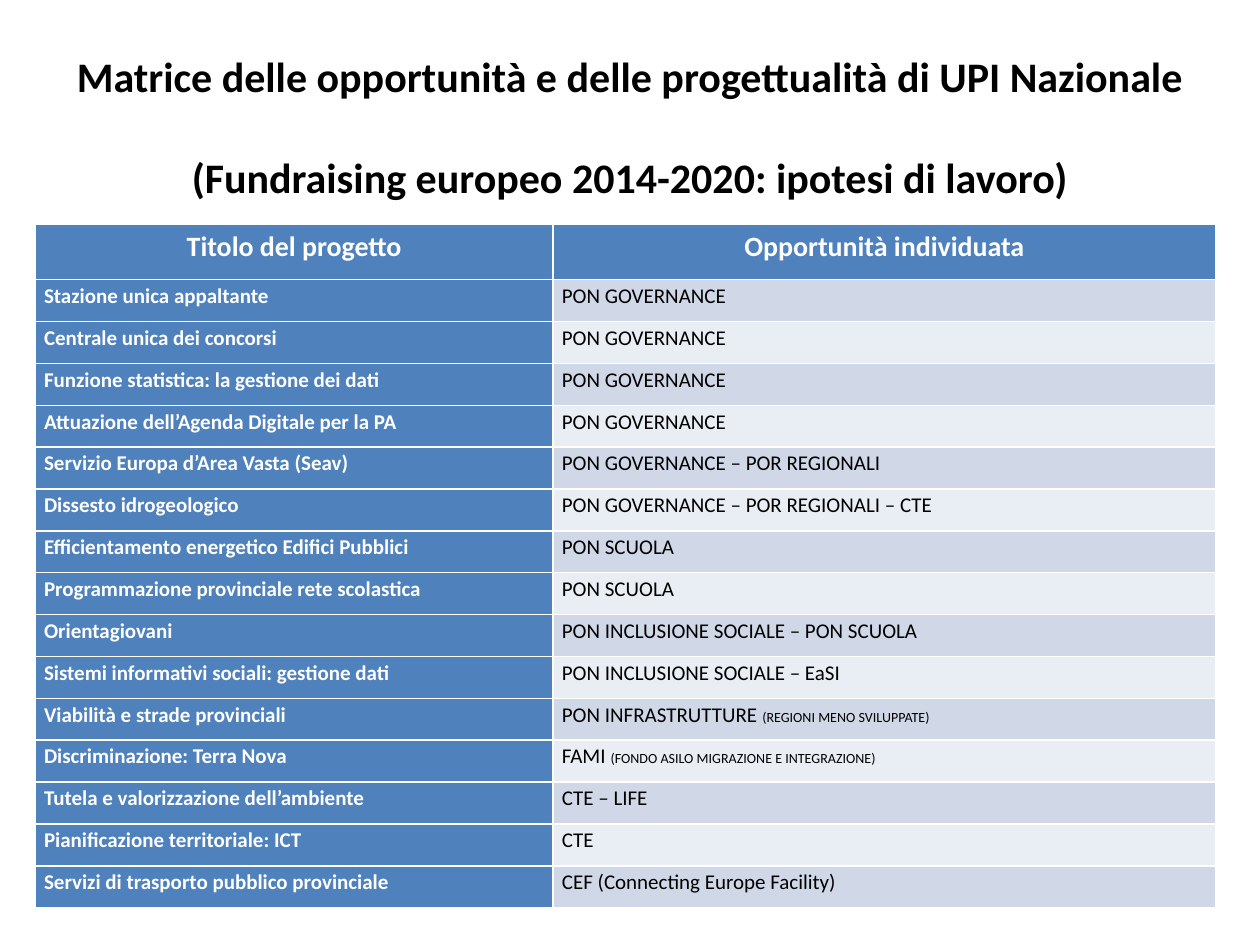
from pptx import Presentation
from pptx import util as u
from pptx.dml.color import RGBColor
from pptx.enum import text as t

WHITE = RGBColor(0xFF, 0xFF, 0xFF)
BLACK = RGBColor(0x00, 0x00, 0x00)
BLUE = RGBColor(0x4F, 0x81, 0xBD)
BANDS = [RGBColor(0xD0, 0xD8, 0xE8), RGBColor(0xE9, 0xED, 0xF4)]
WIDE, HIGH = u.Inches(10), u.Inches(7.5)
TITLE = ["Matrice delle opportunità e delle progettualità di UPI Nazionale",
         "(Fundraising europeo 2014-2020: ipotesi di lavoro)"]
HEADS = ["Titolo del progetto", "Opportunità individuata"]
ROWS = [
    ("Stazione unica appaltante", "PON GOVERNANCE"),
    ("Centrale unica dei concorsi", "PON GOVERNANCE"),
    ("Funzione statistica: la gestione dei dati", "PON GOVERNANCE"),
    ("Attuazione dell’Agenda Digitale per la PA", "PON GOVERNANCE"),
    ("Servizio Europa d’Area Vasta (Seav)", "PON GOVERNANCE – POR REGIONALI"),
    ("Dissesto idrogeologico", "PON GOVERNANCE – POR REGIONALI – CTE"),
    ("Efficientamento energetico Edifici Pubblici", "PON SCUOLA"),
    ("Programmazione provinciale rete scolastica", "PON SCUOLA"),
    ("Orientagiovani", "PON INCLUSIONE SOCIALE – PON SCUOLA"),
    ("Sistemi informativi sociali: gestione dati", "PON INCLUSIONE SOCIALE – EaSI"),
    ("Viabilità e strade provinciali", "PON INFRASTRUTTURE ", "(REGIONI MENO SVILUPPATE)"),
    ("Discriminazione: Terra Nova", "FAMI ", "(FONDO ASILO MIGRAZIONE E INTEGRAZIONE)"),
    ("Tutela e valorizzazione dell’ambiente", "CTE – LIFE"),
    ("Pianificazione territoriale: ICT", "CTE"),
    ("Servizi di trasporto pubblico provinciale", "CEF (Connecting Europe Facility)"),
]


def write(para, words, size=12, color=BLACK, bold=False, align=t.PP_ALIGN.LEFT, space=None):
    """Add a formatted run to a paragraph."""
    para.alignment = align
    para.line_spacing = space
    run = para.add_run()
    run.text = words
    font = run.font
    font.name, font.size, font.bold = "Calibri", u.Pt(size), bold
    font.color.rgb = color


def place_title(slide, left, top, width, height):
    """Place and fill the two-line title."""
    title = slide.shapes.title
    title.left, title.top, title.width, title.height = left, top, width, height
    frame = title.text_frame
    frame.word_wrap = True
    frame.auto_size = t.MSO_AUTO_SIZE.NONE
    frame.vertical_anchor = t.MSO_ANCHOR.MIDDLE
    frame.margin_left = frame.margin_right = u.Inches(0.05)
    for index, line in enumerate(TITLE):
        para = frame.add_paragraph() if index else frame.paragraphs[0]
        para.space_before = u.Pt(29 * index)
        write(para, line, size=24, bold=True, align=t.PP_ALIGN.CENTER)


def fill_cell(cell, fill, *parts, **form):
    """Colour a cell and write its main words and an optional small note."""
    cell.fill.solid()
    cell.fill.fore_color.rgb = fill
    cell.margin_left = cell.margin_right = u.Inches(0.07)
    cell.margin_top = cell.margin_bottom = 0
    para = cell.text_frame.paragraphs[0]
    write(para, parts[0], space=1.15, **form)
    for note in parts[1:]:
        write(para, note, size=8, space=1.15)


def place_matrix(slide, left, top, width, height):
    """Place the table of projects and funding options."""
    table = slide.shapes.add_table(len(ROWS) + 1, 2, left, top, width, height).table
    table.first_col = True
    table.columns[0].width = u.Inches(4.11)
    table.columns[1].width = width - u.Inches(4.11)
    head = u.Inches(0.44)
    for index, row in enumerate(table.rows):
        row.height = (height - head) // len(ROWS) if index else head
    for col, words in enumerate(HEADS):
        fill_cell(table.cell(0, col), BLUE, words, size=16, color=WHITE,
                  bold=True, align=t.PP_ALIGN.CENTER)
    for index, (name, *funds) in enumerate(ROWS):
        fill_cell(table.cell(index + 1, 0), BLUE, name, color=WHITE, bold=True)
        fill_cell(table.cell(index + 1, 1), BANDS[index % 2], *funds)


def main():
    """Build and save the slide."""
    deck = Presentation()
    deck.slide_width, deck.slide_height = WIDE, HIGH
    slide = deck.slides.add_slide(deck.slide_layouts[5])
    place_title(slide, u.Inches(0.5), u.Inches(0.3), u.Inches(9), u.Inches(1.4))
    place_matrix(slide, u.Inches(0.28), u.Inches(1.78), u.Inches(9.37), u.Inches(5.43))
    deck.save("out.pptx")


if __name__ == "__main__":
    main()
